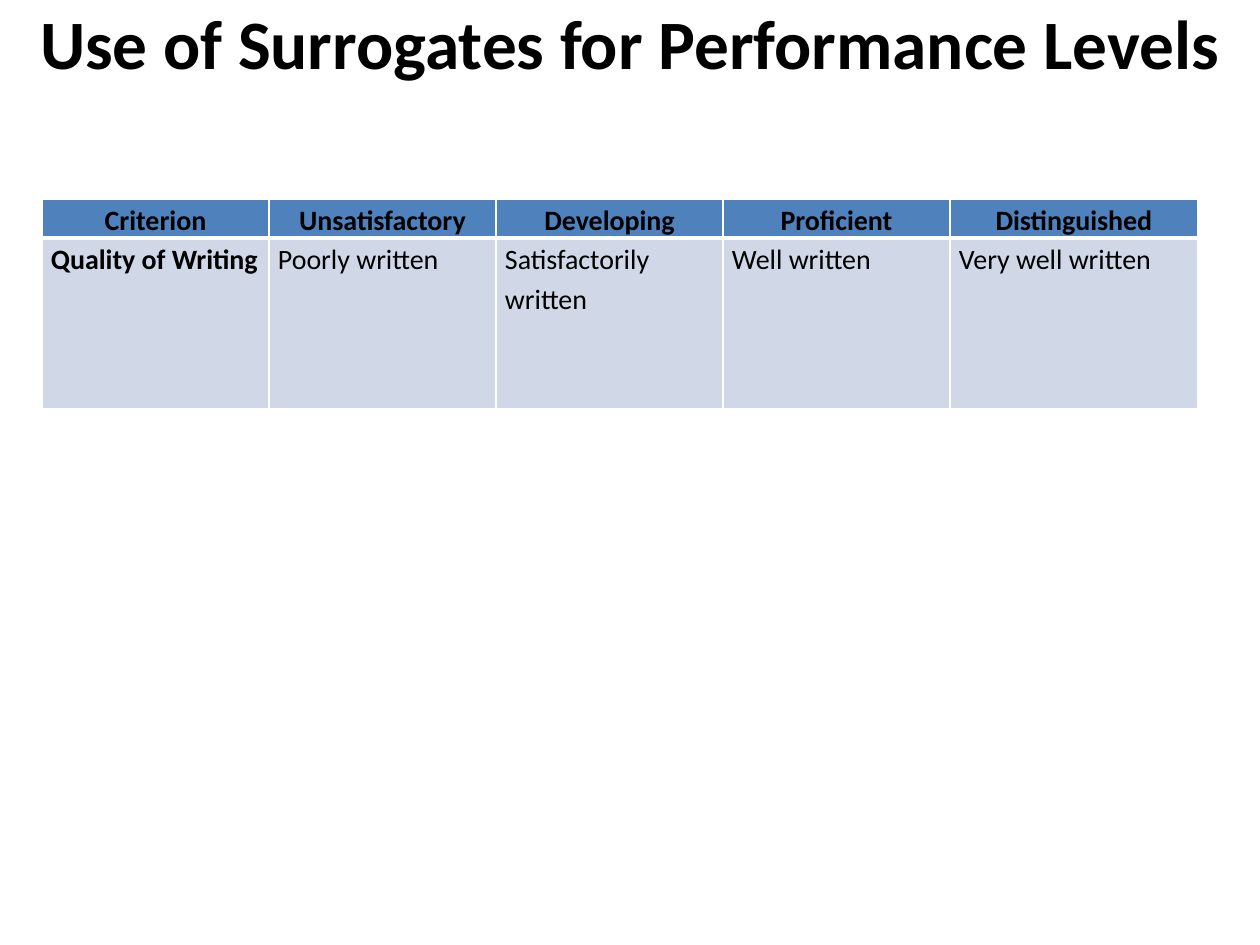
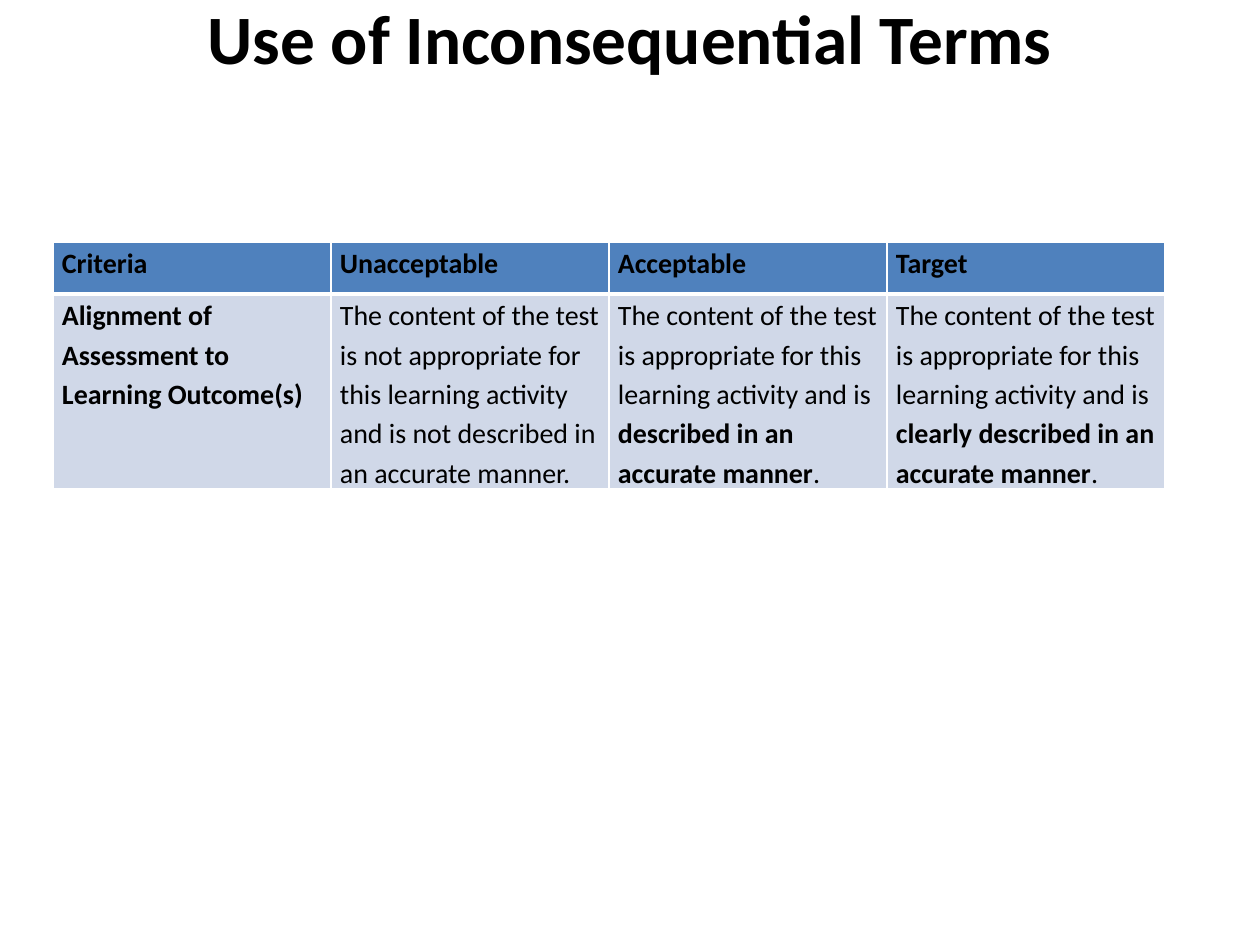
from lxml.etree import SubElement
from pptx import Presentation
from pptx.dml.color import RGBColor
from pptx.enum.text import MSO_ANCHOR as Anchor, PP_ALIGN as Align
from pptx.oxml.ns import qn
from pptx.util import Emu, Pt

PX = 914400 / 126
FONT = "Calibri"
COLORS = {
    "paper": "FFFFFF",
    "ink": "000000",
    "header": "4F81BD",
    "body": "D0D8E8",
}
THIN, THICK = 1, 3
CELL_INSET = 9


def px(length):
    return Emu(round(length * PX))


def color(name):
    return RGBColor.from_string(COLORS[name])


def style_font(font, size, bold):
    font.name = FONT
    font.size = Pt(size)
    font.bold = bold
    font.color.rgb = color("ink")


def add_title(page, box, text):
    title = page.shapes.add_textbox(*map(px, box))
    frame = title.text_frame
    frame.word_wrap = True
    frame.vertical_anchor = Anchor.MIDDLE
    frame.text = text
    para = frame.paragraphs[0]
    para.alignment = Align.CENTER
    style_font(para.runs[0].font, 39.6, True)


def add_borders(cell, top, bottom):
    properties = cell._tc.get_or_add_tcPr()
    widths = {"lnL": THIN, "lnR": THIN, "lnT": top, "lnB": bottom}
    for side, width in widths.items():
        line = SubElement(properties, qn(f"a:{side}"), w=str(Pt(width)))
        fill = SubElement(line, qn("a:solidFill"))
        SubElement(fill, qn("a:srgbClr"), val=COLORS["paper"])


def fill_cell(cell, text, is_header, bold, align):
    """Write text into a cell; parts between ** marks switch weight."""
    if is_header:
        add_borders(cell, THIN, THICK)
    else:
        add_borders(cell, THICK, THIN)
    cell.fill.solid()
    cell.fill.fore_color.rgb = color("header" if is_header else "body")
    cell.margin_left = cell.margin_right = px(CELL_INSET)
    cell.margin_top = cell.margin_bottom = 0
    para = cell.text_frame.paragraphs[0]
    para.alignment = align
    para.line_spacing = 1.15
    for index, part in enumerate(text.split("**")):
        span = para.add_run()
        span.text = part
        style_font(span.font, 16, bold or index % 2 == 1)


def add_rubric(page, origin, widths, heights, rows, header_align):
    left, top = origin
    box = (left, top, sum(widths), sum(heights))
    table = page.shapes.add_table(len(rows), len(widths), *map(px, box)).table
    for column, width in zip(table.columns, widths):
        column.width = px(width)
    for row, height in zip(table.rows, heights):
        row.height = px(height)
    for r, texts in enumerate(rows):
        is_header = r == 0
        align = header_align if is_header else Align.LEFT
        for c, text in enumerate(texts):
            fill_cell(table.cell(r, c), text, is_header, is_header or c == 0, align)


def add_page(deck):
    page = deck.slides.add_slide(deck.slide_layouts[6])
    page.background.fill.solid()
    page.background.fill.fore_color.rgb = color("paper")
    return page


def build_surrogates(deck):
    page = add_page(deck)
    add_title(page, (0, 0, 1260, 84), "Use of Surrogates for Performance Levels")
    rows = [
        ["Criterion", "Unsatisfactory", "Developing", "Proficient", "Distinguished"],
        ["Quality of Writing", "Poorly written", "Satisfactorily written",
         "Well written", "Very well written"],
    ]
    add_rubric(page, (42, 199), [227] * 4 + [248], [39, 171], rows, Align.CENTER)


def build_inconsequential_terms(deck):
    page = add_page(deck)
    add_title(page, (63, 0, 1134, 73), "Use of Inconsequential Terms")
    appropriate = ("The content of the test is appropriate for this "
                   "learning activity and is ")
    rows = [
        ["Criteria", "Unacceptable", "Acceptable", "Target"],
        ["Alignment of Assessment to Learning Outcome(s)",
         "The content of the test is not appropriate for this learning activity "
         "and is not described in an accurate manner.",
         appropriate + "**described in an accurate manner**.",
         appropriate + "**clearly described in an accurate manner**."],
    ]
    add_rubric(page, (53, 242), [278] * 4, [52, 195], rows, Align.LEFT)


def main():
    deck = Presentation()
    deck.slide_width, deck.slide_height = px(1260), px(945)
    build_surrogates(deck)
    build_inconsequential_terms(deck)
    deck.save("out.pptx")


if __name__ == "__main__":
    main()
